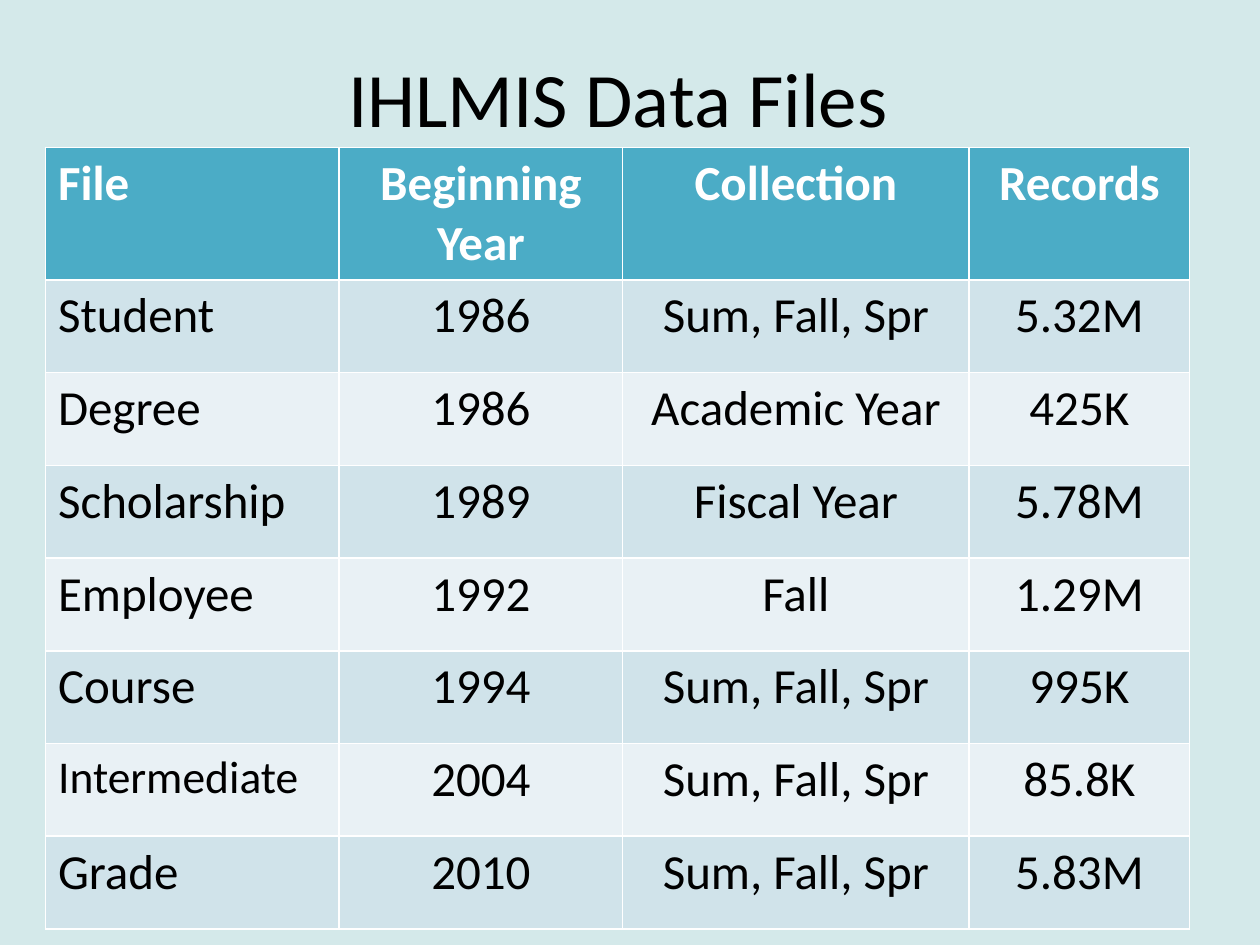
from dataclasses import dataclass

import pptx
import pptx.dml.color
import pptx.enum.text
import pptx.util

Pt = pptx.util.Pt
Color = pptx.dml.color.RGBColor
Align = pptx.enum.text.PP_ALIGN


@dataclass(frozen=True)
class Theme:
    font: str = "Calibri"
    background: str = "D4E9EA"
    header_fill: str = "4BACC6"
    band_fills: tuple[str, str] = ("D0E3EA", "E9F1F5")
    header_text: str = "FFFFFF"
    text: str = "000000"
    title_size: float = 44
    table_size: float = 28
    long_name_size: float = 26


@dataclass(frozen=True)
class DataFile:
    name: str
    beginning_year: str
    collection: str
    records: str
    name_size: float = Theme.table_size


@dataclass(frozen=True)
class Column:
    heading: str
    width: float
    alignment: Align = Align.CENTER


THEME = Theme()
ROW_HEIGHT = 53
COLUMNS = [
    Column("File", 167.8, Align.LEFT),
    Column("Beginning Year", 162),
    Column("Collection", 198),
    Column("Records", 126),
]
DATA_FILES = [
    DataFile("Student", "1986", "Sum, Fall, Spr", "5.32M"),
    DataFile("Degree", "1986", "Academic Year", "425K"),
    DataFile("Scholarship", "1989", "Fiscal Year", "5.78M"),
    DataFile("Employee", "1992", "Fall", "1.29M"),
    DataFile("Course", "1994", "Sum, Fall, Spr", "995K"),
    DataFile("Intermediate", "2004", "Sum, Fall, Spr", "85.8K", THEME.long_name_size),
    DataFile("Grade", "2010", "Sum, Fall, Spr", "5.83M"),
]


def write_text(text_frame, text: str, size: float, color: str,
               alignment: Align, bold: bool = False) -> None:
    paragraph = text_frame.paragraphs[0]
    paragraph.alignment = alignment
    run = paragraph.add_run()
    run.text = text
    run.font.name = THEME.font
    run.font.size = Pt(size)
    run.font.bold = bold
    run.font.color.rgb = Color.from_string(color)


def fill_cell(cell, color: str) -> None:
    cell.fill.solid()
    cell.fill.fore_color.rgb = Color.from_string(color)


def add_title(slide, text: str) -> None:
    title = slide.shapes.title
    title.left, title.top = Pt(17.3), Pt(10)
    title.width, title.height = Pt(671.8), Pt(90)
    title.text_frame.vertical_anchor = pptx.enum.text.MSO_ANCHOR.MIDDLE
    write_text(title.text_frame, text, THEME.title_size, THEME.text, Align.CENTER)


def add_file_table(slide, columns: list[Column], files: list[DataFile]) -> None:
    # The default table style supplies the white rules between cells
    frame = slide.shapes.add_table(
        len(files) + 1, len(columns), Pt(26), Pt(84.3),
        Pt(sum(column.width for column in columns)), Pt(445.7))
    table = frame.table
    for row in table.rows:
        row.height = Pt(ROW_HEIGHT)
    # The two-line heading makes the table taller than its nominal rows
    frame.height = Pt(445.7)

    # Header row
    for index, column in enumerate(columns):
        table.columns[index].width = Pt(column.width)
        cell = table.cell(0, index)
        fill_cell(cell, THEME.header_fill)
        write_text(cell.text_frame, column.heading, THEME.table_size,
                   THEME.header_text, column.alignment, bold=True)

    # Banded data rows
    for row_index, file in enumerate(files):
        values = (file.name, file.beginning_year, file.collection, file.records)
        for index, (column, value) in enumerate(zip(columns, values)):
            cell = table.cell(row_index + 1, index)
            fill_cell(cell, THEME.band_fills[row_index % 2])
            size = file.name_size if index == 0 else THEME.table_size
            write_text(cell.text_frame, value, size, THEME.text, column.alignment)


def main() -> None:
    presentation = pptx.Presentation()
    presentation.slide_width, presentation.slide_height = Pt(720), Pt(540)
    slide = presentation.slides.add_slide(presentation.slide_layouts[5])
    slide.background.fill.solid()
    slide.background.fill.fore_color.rgb = Color.from_string(THEME.background)
    add_title(slide, "IHLMIS Data Files")
    add_file_table(slide, COLUMNS, DATA_FILES)
    presentation.save("out.pptx")


if __name__ == "__main__":
    main()
